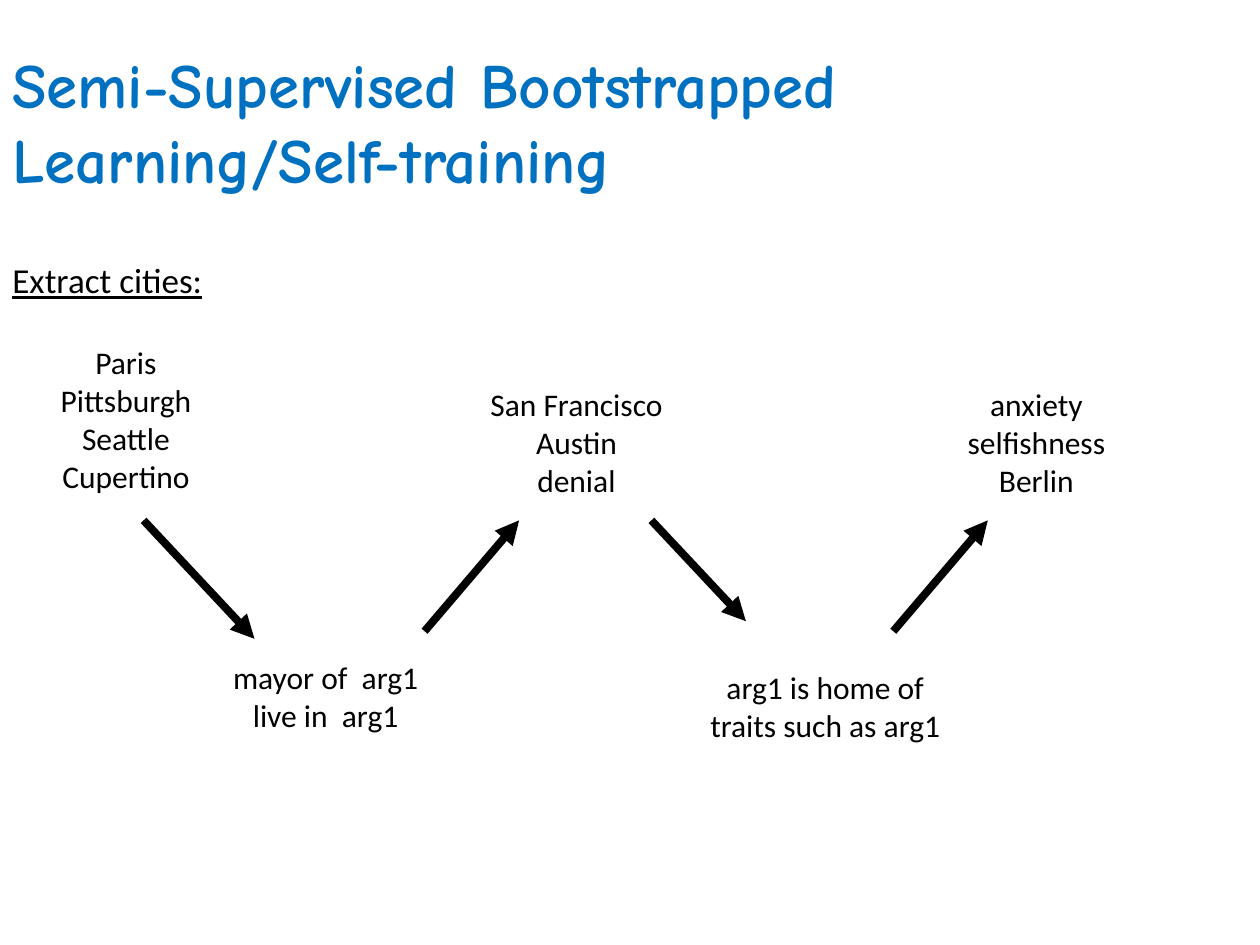
import pptx
import pptx.util
import pptx.dml.color
import pptx.enum.shapes
import pptx.enum.text
from pptx.util import Inches
from lxml import etree

BLACK = "000000"
BLUE = "0070C0"

TITLE = "Semi-Supervised Bootstrapped Learning/Self-training"
TASK = "Extract cities:"

# (left, top, width, height), lines
WORD_GROUPS = [
    ((0.33, 2.67, 1.34, 1.31), ["Paris", "Pittsburgh", "Seattle", "Cupertino"]),
    ((1.67, 5.17, 1.83, 0.71), ["mayor of  arg1", "live in  arg1"]),
    ((3.67, 3, 1.81, 1.01), ["San Francisco", "Austin", "denial"]),
    ((5.42, 5.25, 2.26, 0.71), ["arg1 is home of", "traits such as arg1"]),
    ((7.5, 3, 1.45, 1.01), ["anxiety", "selfishness", "Berlin"]),
]

# start, end
ARROWS = [
    ((1.14, 4.13), (2.02, 5.07)),
    ((3.37, 5.01), (4.12, 4.13)),
    ((5.17, 4.13), (5.92, 4.93)),
    ((7.09, 5.01), (7.84, 4.13)),
]


def color(hex_value):
    return pptx.dml.color.RGBColor.from_string(hex_value)


def add_text(slide, place, lines, size, font="Calibri", fill=BLACK,
             centered=False, wrap=True, bold=False, underline=False):
    frame = slide.shapes.add_textbox(*map(Inches, place)).text_frame
    frame.word_wrap = wrap
    frame.vertical_anchor = pptx.enum.text.MSO_ANCHOR.MIDDLE
    align = pptx.enum.text.PP_ALIGN
    for index, line in enumerate(lines):
        paragraph = frame.add_paragraph() if index else frame.paragraphs[0]
        paragraph.alignment = align.CENTER if centered else align.LEFT
        run = paragraph.add_run()
        run.text = line
        run.font.name = font
        run.font.size = pptx.util.Pt(size)
        run.font.bold = bold
        run.font.underline = underline
        run.font.color.rgb = color(fill)


def add_arrow(slide, start, end):
    arrow = slide.shapes.add_connector(
        pptx.enum.shapes.MSO_CONNECTOR.STRAIGHT, *map(Inches, start + end))
    arrow.line.color.rgb = color(BLACK)
    arrow.line.width = pptx.util.Pt(4.5)
    qn = pptx.oxml.ns.qn
    etree.SubElement(arrow.line._get_or_add_ln(), qn("a:tailEnd"), type="triangle")
    etree.SubElement(arrow._element.spPr, qn("a:effectLst"))


def main():
    deck = pptx.Presentation()
    deck.slide_width, deck.slide_height = Inches(10), Inches(7.5)
    slide = deck.slides.add_slide(deck.slide_layouts[6])

    add_text(slide, (0, 0.5, 9.72, 0.92), [TITLE], 36,
             font="Comic Neue", fill=BLUE, bold=True)
    add_text(slide, (0, 2, 1.92, 0.44), [TASK], 20, underline=True)
    for place, words in WORD_GROUPS:
        add_text(slide, place, words, 18, centered=True, wrap=False)
    for start, end in ARROWS:
        add_arrow(slide, start, end)

    deck.save("out.pptx")


if __name__ == "__main__":
    main()
